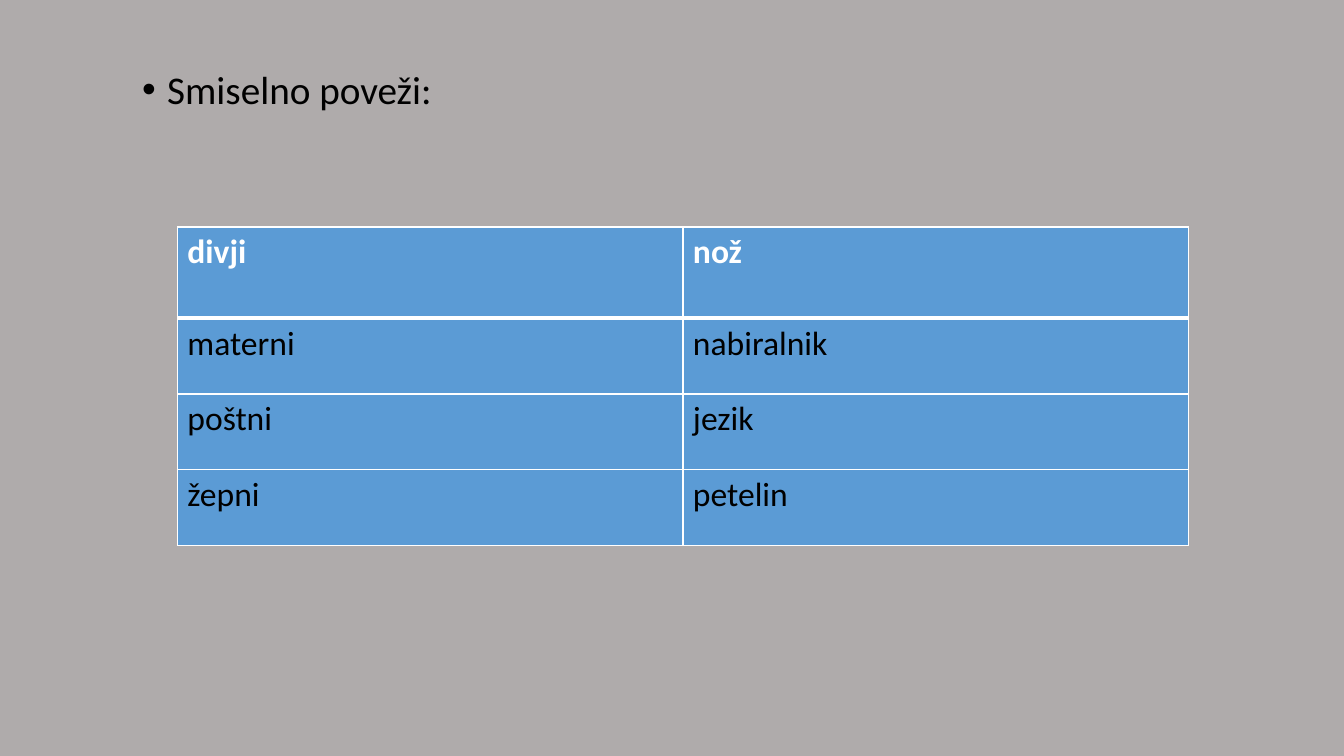
from lxml import etree
from pptx import Presentation
from pptx.dml.color import RGBColor
from pptx.oxml.ns import qn
from pptx.util import Cm, Pt

COLORS = {"background": "AFABAB", "cell": "5B9BD5", "text": "000000", "white": "FFFFFF"}
ROWS = [
    ("divji", "nož"),
    ("materni", "nabiralnik"),
    ("poštni", "jezik"),
    ("žepni", "petelin"),
]


def add_text(tf, text, size=24, color="text", bold=False):
    p = tf.paragraphs[0]
    r = p.add_run()
    r.text = text
    r.font.name = "Calibri"
    r.font.size = Pt(size)
    r.font.bold = bold
    r.font.color.rgb = RGBColor.from_string(COLORS[color])
    return p


def set_borders(cell, widths):
    tcPr = cell._tc.get_or_add_tcPr()
    for i, (side, width) in enumerate(widths.items()):
        ln = etree.Element(qn(f"a:ln{side}"), w=str(Pt(width)))
        fill = etree.SubElement(ln, qn("a:solidFill"))
        etree.SubElement(fill, qn("a:srgbClr"), val=COLORS["white"])
        tcPr.insert(i, ln)


# Slide and background
prs = Presentation()
prs.slide_width, prs.slide_height = Cm(33.87), Cm(19.05)
s = prs.slides.add_slide(prs.slide_layouts[6])
s.background.fill.solid()
s.background.fill.fore_color.rgb = RGBColor.from_string(COLORS["background"])

# Bulleted instruction
tf = s.shapes.add_textbox(Cm(3.33), Cm(1.65), Cm(31.55), Cm(12.09)).text_frame
tf.word_wrap = True
p = add_text(tf, "Smiselno poveži:", size=28)
p.line_spacing = 0.9
p.space_before = Pt(10)
pPr = p._p.get_or_add_pPr()
pPr.set("marL", str(Cm(0.635)))
pPr.set("indent", str(-Cm(0.635)))
etree.SubElement(pPr, qn("a:buFont"), typeface="Arial")
etree.SubElement(pPr, qn("a:buChar"), char="•")

# Word table
table = s.shapes.add_table(len(ROWS), 2, Cm(4.47), Cm(5.72), Cm(25.48), Cm(8.03)).table
for row, words in enumerate(ROWS):
    header = row == 0
    table.rows[row].height = Cm(2.3 if header else 1.91)
    for col, word in enumerate(words):
        cell = table.cell(row, col)
        cell.fill.solid()
        cell.fill.fore_color.rgb = RGBColor.from_string(COLORS["cell"])
        add_text(cell.text_frame, word, color="white" if header else "text", bold=header)
        set_borders(cell, {"L": 1, "R": 1, "T": 3 if row == 1 else 1, "B": 3 if header else 1})

prs.save("out.pptx")
